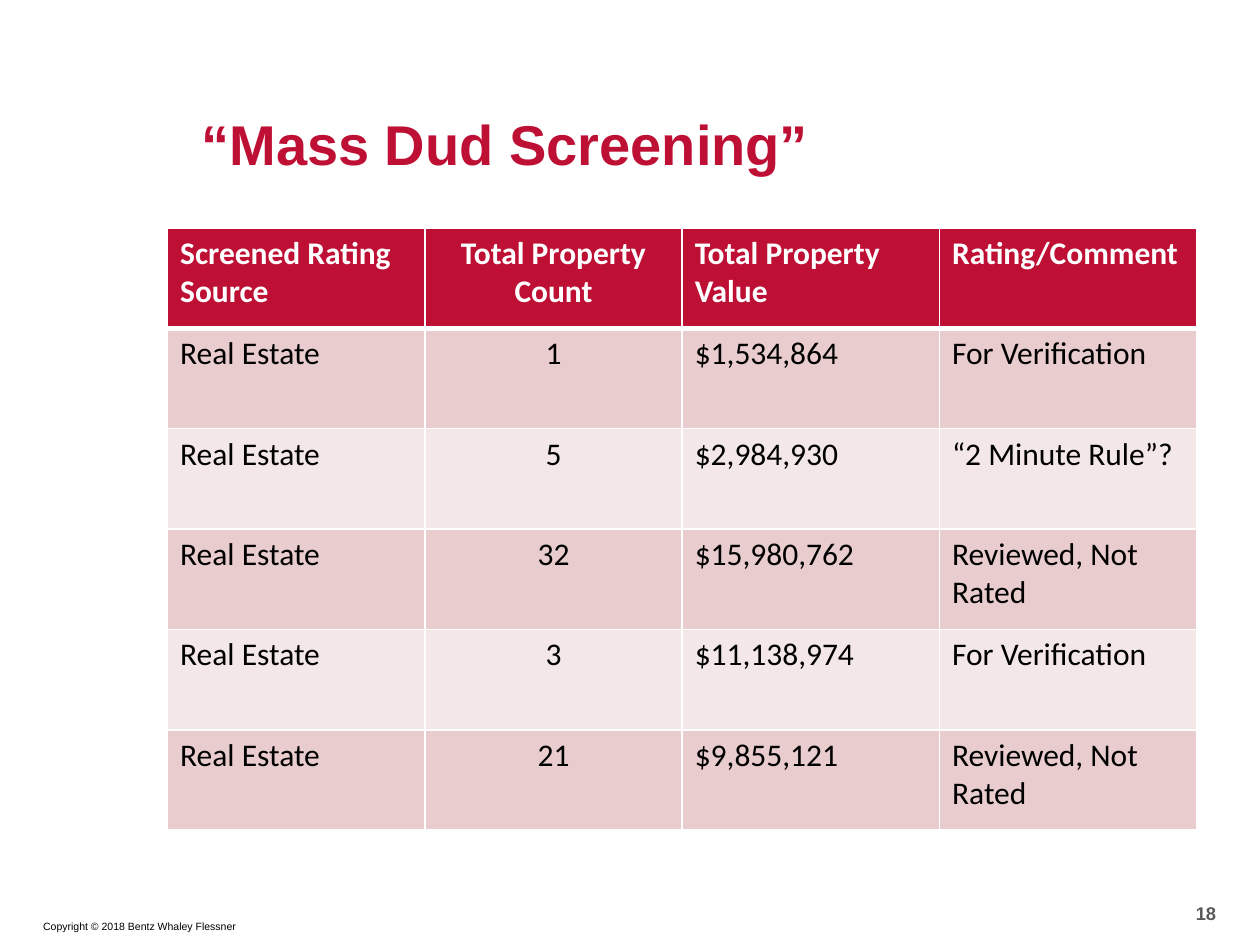
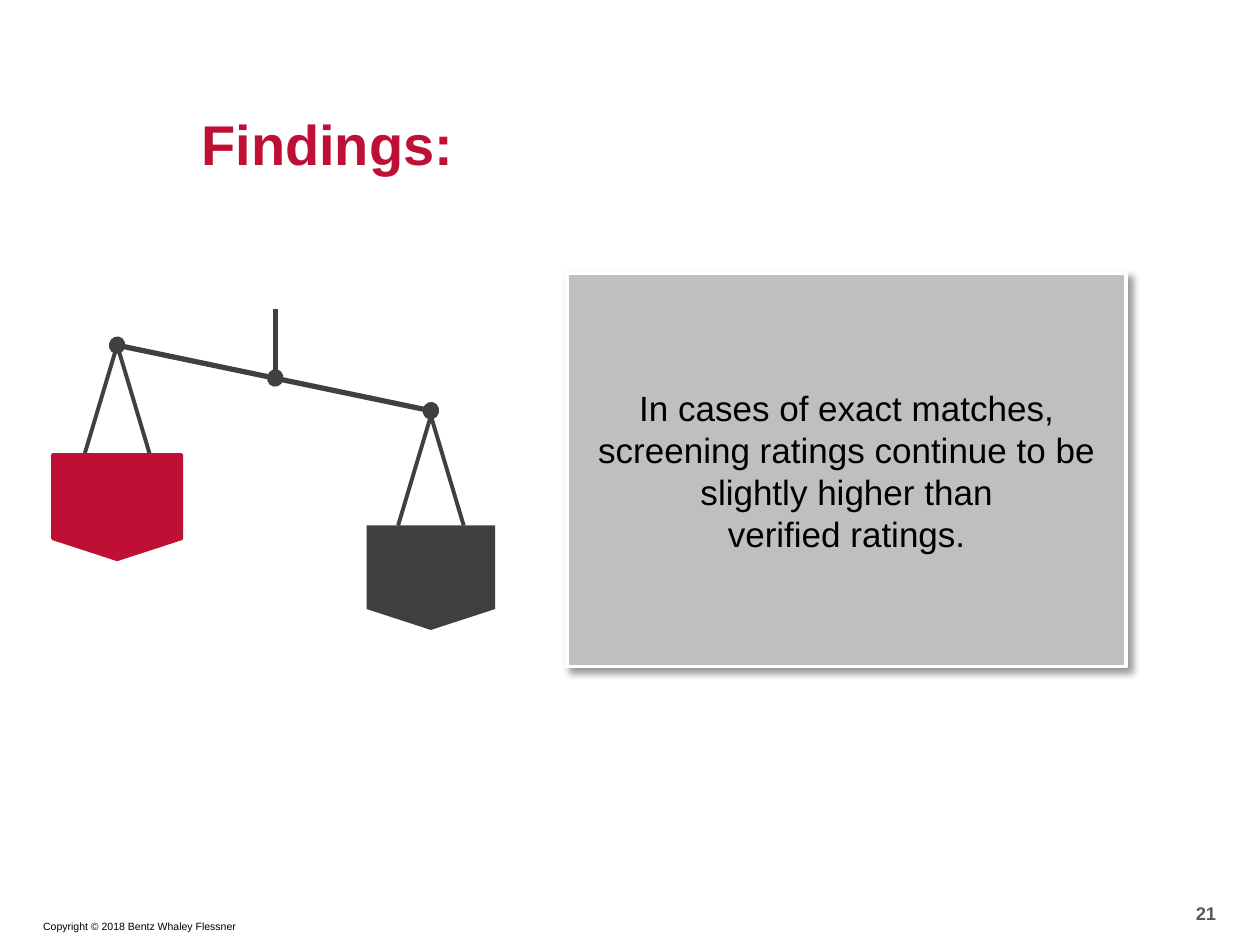
"""Build two slides: a screening table and a findings balance."""
from lxml.etree import SubElement as Sub
from pptx import Presentation as Deck
from pptx.dml.color import RGBColor as Color
from pptx.enum.shapes import MSO_CONNECTOR as Link, MSO_SHAPE as Form
from pptx.enum.text import MSO_ANCHOR as Anchor, PP_ALIGN as Align
from pptx.oxml.ns import qn
from pptx.util import Inches, Pt

COLS, ROWS = 100, 75
UNIT = Inches(0.1)
HUES = {
    "red": "BE0F34", "pink": "E8CCCE", "pale": "F4E7E8", "white": "FFFFFF",
    "black": "000000", "dark": "404040", "coal": "3F3F3F", "gray": "595959",
    "card": "BFBFBF",
}
HEAD = ("Screened Rating Source", "Total Property Count",
        "Total Property Value", "Rating/Comment")
BODY = (
    ("1", "$1,534,864", "For Verification"),
    ("5", "$2,984,930", "“2 Minute Rule”?"),
    ("32", "$15,980,762", "Reviewed, Not Rated"),
    ("3", "$11,138,974", "For Verification"),
    ("21", "$9,855,121", "Reviewed, Not Rated"),
)


def grid(*marks):
    """Turn grid columns and rows into lengths."""
    return [int(mark * UNIT) for mark in marks]


def hue(name):
    """Look up a colour by name."""
    return Color.from_string(HUES[name])


def write(frame, text, size, tone, bold=False, align=Align.LEFT, font="Arial"):
    """Fill a frame with one styled paragraph."""
    frame.text = text
    frame.word_wrap = True
    para = frame.paragraphs[0]
    para.alignment = align
    for run in para.runs:
        face = run.font
        face.name, face.size, face.bold = font, Pt(size), bold
        face.color.rgb = hue(tone)


def label(slide, spot, text, size, tone, anchor=Anchor.TOP, **style):
    """Add a text box."""
    frame = slide.shapes.add_textbox(*grid(*spot)).text_frame
    frame.vertical_anchor = anchor
    write(frame, text, size, tone, **style)


def page(deck, title, number):
    """Add a slide with its title and footers."""
    slide = deck.slides.add_slide(deck.slide_layouts[6])
    label(slide, (79.2, 70.8, 18.3, 3.3), number, 10.5, "gray",
          Anchor.MIDDLE, bold=True, align=Align.RIGHT)
    label(slide, (-4.5, 72.5, 24.2, 2), "Copyright © 2018 Bentz Whaley Flessner",
          6, "black", align=Align.RIGHT)
    label(slide, (15, 8.2, 77.5, 9.3), title, 32, "red", bold=True)
    return slide


def shape(shapes, form, spot, fill, line=None, width=0):
    """Add a flat preset shape."""
    item = shapes.add_shape(form, *grid(*spot))
    item.shadow.inherit = False
    item.fill.solid()
    item.fill.fore_color.rgb = hue(fill)
    if line:
        item.line.color.rgb = hue(line)
        item.line.width = Pt(width)
    else:
        item.line.fill.background()
    return item


def rod(shapes, start, end, width):
    """Add a dark straight line."""
    item = shapes.add_connector(Link.STRAIGHT, *grid(*start, *end))
    item.line.color.rgb = hue("dark")
    item.line.width = Pt(width)
    Sub(item.element.spPr, qn("a:effectLst"))


def edge(cell, top, base):
    """Draw white borders around a cell."""
    props = cell._tc.get_or_add_tcPr()
    sides = (("L", 1), ("R", 1), ("T", top), ("B", base))
    for spot, (side, width) in enumerate(sides):
        line = Sub(props, qn("a:ln" + side), w=str(Pt(width)))
        Sub(Sub(line, qn("a:solidFill")), qn("a:srgbClr"), val=HUES["white"])
        props.insert(spot, line)


def table(slide, spot, rows):
    """Add a table with a red head and banded rows."""
    wide, high = len(rows[0]), len(rows)
    sheet = slide.shapes.add_table(high, wide, *grid(*spot)).table
    for r, row in enumerate(rows):
        fill = "red" if r == 0 else ("pale", "pink")[r % 2]
        for c, text in enumerate(row):
            cell = sheet.cell(r, c)
            cell.fill.solid()
            cell.fill.fore_color.rgb = hue(fill)
            edge(cell, 3 if r == 1 else 1, 3 if r == 0 else 1)
            write(cell.text_frame, text, 18, "black" if r else "white",
                  bold=r == 0, font="Calibri",
                  align=Align.CENTER if c == 1 else Align.LEFT)


def card(slide, spot, text):
    """Add a gray card with a soft shadow."""
    item = shape(slide.shapes, Form.RECTANGLE, spot, "card", "white", 2.25)
    glow = Sub(item.element.spPr.find(qn("a:effectLst")), qn("a:outerShdw"),
               blurRad=str(Pt(4)), dist=str(Pt(3)), dir=str(45 * 60000),
               algn="tl", rotWithShape="0")
    tint = Sub(glow, qn("a:srgbClr"), val=HUES["black"])
    Sub(tint, qn("a:alpha"), val="40000")
    item.text_frame.vertical_anchor = Anchor.MIDDLE
    write(item.text_frame, text, 20, "black", align=Align.CENTER)


def pan(shapes, x, y, fill, line=None):
    """Hang a pan on two strings from a point."""
    drop = y + 8.7
    for side in (-2.6, 2.6):
        rod(shapes, (x, y), (x + side, drop), 2.25)
    shape(shapes, Form.FLOWCHART_OFFPAGE_CONNECTOR,
          (x - 5.1, drop, 10.2, 8.3), fill, line, 2)


def scale(slide):
    """Draw a balance that tips to the right."""
    shapes = slide.shapes.add_group_shape().shapes
    left, mid, right = (9.3, 27.4), (21.85, 30), (34.2, 32.6)
    rod(shapes, mid, (mid[0], 24.5), 3)
    pan(shapes, *left, "red", "red")
    pan(shapes, right[0], 33, "coal")
    rod(shapes, left, right, 3)
    for x, y in (mid, left, right):
        dot = shape(shapes, Form.OVAL, (x - 0.65, y - 0.7, 1.3, 1.4), "dark")
        dot.rotation = 11.8


def main():
    """Build and save the deck."""
    deck = Deck()
    deck.slide_width, deck.slide_height = grid(COLS, ROWS)
    slide = page(deck, "“Mass Dud Screening”", "18")
    rows = [HEAD] + [("Real Estate", *row) for row in BODY]
    table(slide, (13.3, 18.1, 81.7, 47.8), rows)
    slide = page(deck, "Findings:", "21")
    card(slide, (45, 21.7, 44.4, 31.2),
         "In cases of exact matches, screening ratings continue to be "
         "slightly higher than\vverified ratings.")
    scale(slide)
    deck.save("out.pptx")


if __name__ == "__main__":
    main()
